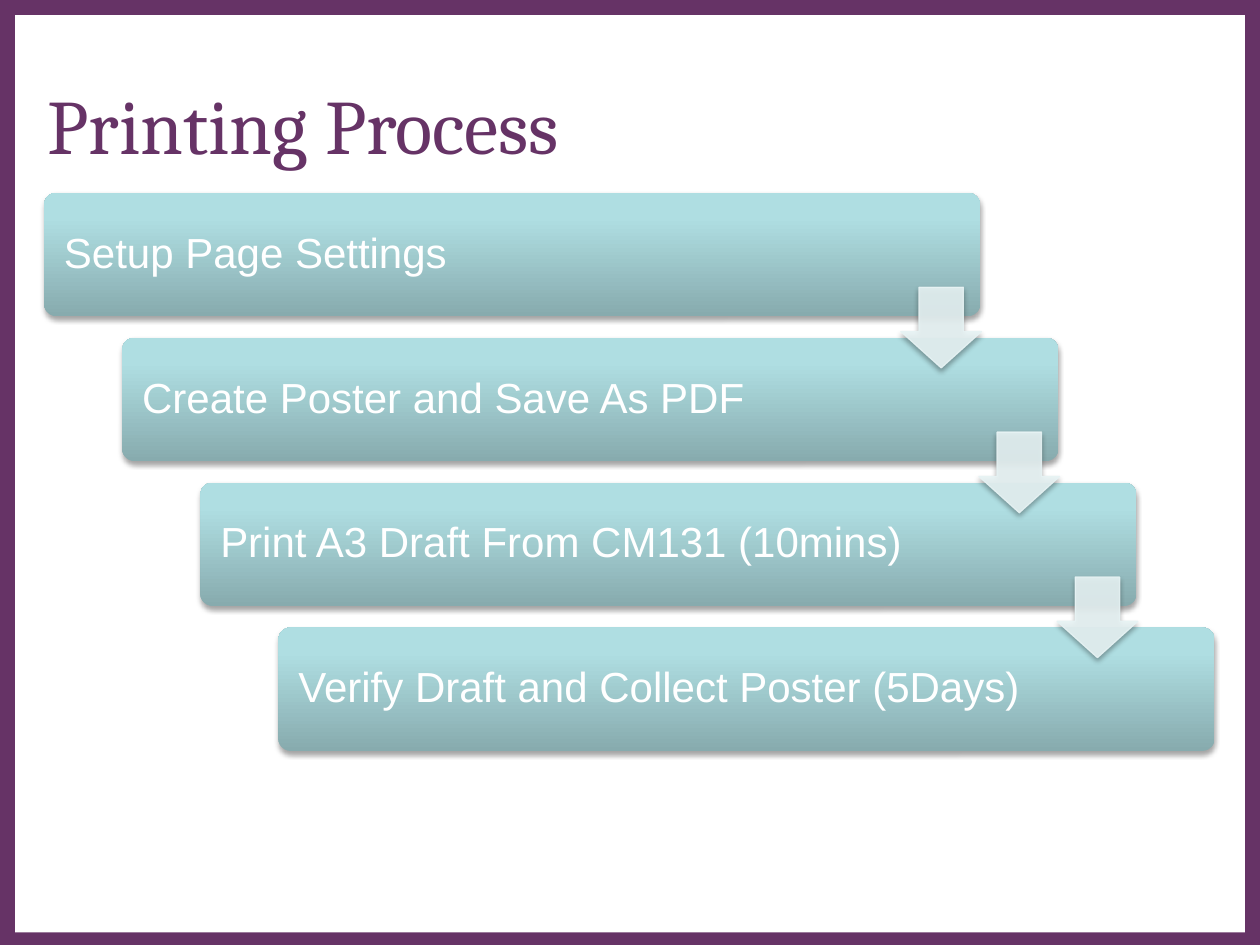
from dataclasses import dataclass
from typing import Any

import pptx
import pptx.dml.color
import pptx.enum.shapes
import pptx.enum.text
import pptx.oxml
import pptx.oxml.ns
import pptx.util
from lxml import etree

PX = 9144  # EMU in one px, 100 px to the inch
COLORS = {
    "purple": "663366",
    "white": "FFFFFF",
    "dark_teal": "87ABAE",
    "teal": "AFDEE2",
    "light_teal": "AFE0E4",
    "arrow": "E7F3F4",
    "shadow": "000000",
}
GRADIENT = ((0, "dark_teal"), (80, "teal"), (100, "light_teal"))
STEPS = (
    "Setup Page Settings",
    "Create Poster and Save As PDF",
    "Print A3 Draft From CM131 (10mins)",
    "Verify Draft and Collect Poster (5Days)",
)
STEP_X, STEP_Y = 62, 115
SHAPES = pptx.enum.shapes.MSO_SHAPE
FRAME_FORMAT = {
    "word_wrap": True,
    "vertical_anchor": pptx.enum.text.MSO_ANCHOR.MIDDLE,
}


@dataclass(frozen=True)
class Box:
    left: int
    top: int
    width: int
    height: int

    def moved(self, index: int) -> "Box":
        """Return the box shifted down the staircase."""
        return Box(self.left + index * STEP_X, self.top + index * STEP_Y,
                   self.width, self.height)

    def emu(self) -> tuple[int, ...]:
        return tuple(value * PX for value in
                     (self.left, self.top, self.width, self.height))


PAGE = Box(0, 0, 1000, 750)
PANEL = Box(12, 12, 976, 728)
TITLE = Box(28, 36, 850, 125)
CARD = Box(35, 153, 743, 98)
ARROW = Box(715, 228, 64, 64)


def rgb(name: str) -> pptx.dml.color.RGBColor:
    return pptx.dml.color.RGBColor.from_string(COLORS[name])


def set_attributes(target: Any, values: dict[str, Any]) -> None:
    for name, value in values.items():
        setattr(target, name, value)


def add_shape(slide: Any, kind: Any, box: Box, color: str,
              adjustments: tuple[float, ...] = ()) -> Any:
    shape = slide.shapes.add_shape(kind, *box.emu())
    shape.shadow.inherit = False
    shape.fill.solid()
    shape.fill.fore_color.rgb = rgb(color)
    shape.line.fill.background()
    for index, value in enumerate(adjustments):
        shape.adjustments[index] = value
    return shape


def write_text(shape: Any, text: str, font: str, size: int, color: str) -> None:
    set_attributes(shape.text_frame, FRAME_FORMAT)
    paragraph = shape.text_frame.paragraphs[0]
    paragraph.text = text
    paragraph.alignment = pptx.enum.text.PP_ALIGN.LEFT
    set_attributes(paragraph.font, {"name": font, "size": pptx.util.Pt(size)})
    paragraph.font.color.rgb = rgb(color)


def add_shadow(shape: Any) -> None:
    effects = shape._element.spPr.find(pptx.oxml.ns.qn("a:effectLst"))
    effects.append(pptx.oxml.parse_xml(
        f'<a:outerShdw {pptx.oxml.ns.nsdecls("a")} blurRad="{pptx.util.Pt(3.1)}" '
        f'dist="{pptx.util.Pt(1.8)}" dir="5400000" rotWithShape="0">'
        f'<a:srgbClr val="{COLORS["shadow"]}"><a:alpha val="35000"/></a:srgbClr>'
        '</a:outerShdw>'))


def fill_gradient(shape: Any) -> None:
    shape.fill.gradient()
    shape.fill.gradient_angle = 90
    stops = next(shape._element.spPr.iter(pptx.oxml.ns.qn("a:gsLst")))
    for stop in list(stops):
        stops.remove(stop)
    for percent, name in GRADIENT:
        stops.append(pptx.oxml.parse_xml(
            f'<a:gs {pptx.oxml.ns.nsdecls("a")} pos="{percent * 1000}">'
            f'<a:srgbClr val="{COLORS[name]}"/></a:gs>'))


def add_card(slide: Any, box: Box, text: str) -> None:
    card = add_shape(slide, SHAPES.ROUNDED_RECTANGLE, box, "teal", (0.1,))
    fill_gradient(card)
    add_shadow(card)
    write_text(card, text, "Arial", 24, "white")
    card.text_frame.margin_left = 13 * PX
    card.text_frame.paragraphs[0].line_spacing = 0.9


def add_arrow(slide: Any, box: Box) -> None:
    arrow = add_shape(slide, SHAPES.DOWN_ARROW, box, "arrow", (0.55, 0.45))
    arrow.line.color.rgb = rgb("arrow")
    arrow.line.width = pptx.util.Pt(0.75)
    # Fill and line are both slightly see-through
    for color in arrow._element.spPr.iter(pptx.oxml.ns.qn("a:srgbClr")):
        etree.SubElement(color, pptx.oxml.ns.qn("a:alpha"), val="90000")
    add_shadow(arrow)


def main() -> None:
    presentation = pptx.Presentation()
    set_attributes(presentation, {"slide_width": PAGE.width * PX,
                                  "slide_height": PAGE.height * PX})
    slide = presentation.slides.add_slide(presentation.slide_layouts[6])

    # Purple border around a white panel
    add_shape(slide, SHAPES.RECTANGLE, PAGE, "purple")
    add_shape(slide, SHAPES.RECTANGLE, PANEL, "white")

    # Title
    title = slide.shapes.add_textbox(*TITLE.emu())
    write_text(title, "Printing Process", "Cambria", 44, "purple")

    # Staircase of steps, then the arrows between them
    for index, text in enumerate(STEPS):
        add_card(slide, CARD.moved(index), text)
    for index in range(len(STEPS) - 1):
        add_arrow(slide, ARROW.moved(index))

    presentation.save("out.pptx")


if __name__ == "__main__":
    main()
